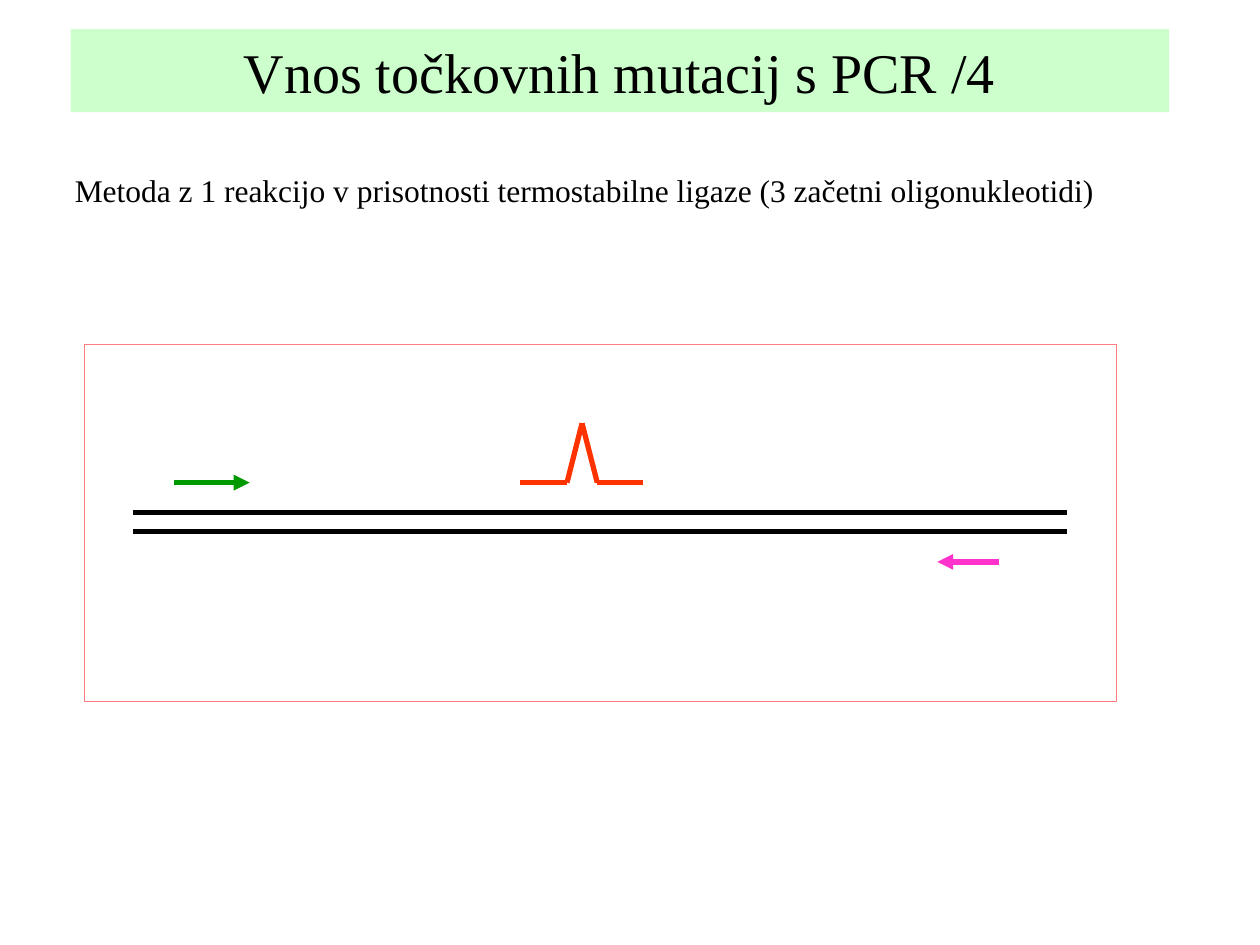
from dataclasses import dataclass
from itertools import pairwise

from lxml.etree import SubElement
from pptx import Presentation
from pptx.dml.color import RGBColor as RGB
from pptx.enum.shapes import MSO_CONNECTOR as Conn, MSO_SHAPE as Shape
from pptx.enum.text import MSO_ANCHOR as Anchor, PP_ALIGN as Align
from pptx.oxml.ns import qn
from pptx.util import Pt

Point = tuple[float, float]


@dataclass(frozen=True)
class Theme:
    font: str = "Times New Roman"
    ink: str = "000000"
    band: str = "CCFFCC"
    frame: str = "FF7C80"
    left: str = "009900"
    right: str = "FF33CC"
    mutant: str = "FF3300"
    title: float = 32
    body: float = 18
    line: float = 3
    thin: float = 0.5


@dataclass(frozen=True)
class Strand:
    """A chain of straight lines through the given points."""
    points: tuple[Point, ...]
    color: str
    arrow: bool = False


THEME = Theme()
PRIMER_Y = 275.8
DNA_X = (76.3, 609.8)

STRANDS = (
    *(Strand(tuple((x, y) for x in DNA_X), THEME.ink) for y in (303.8, 293)),
    Strand(((99.4, PRIMER_Y), (142.6, PRIMER_Y)), THEME.left, True),
    Strand(((571, 321.1), (535.7, 321.1)), THEME.right, True),
    Strand(((297.4, PRIMER_Y), (324, PRIMER_Y), (332.6, 241.9),
            (341.3, PRIMER_Y), (367.2, PRIMER_Y)), THEME.mutant),
)


def add_text(frame, text: str, size: float, align: Align, anchor: Anchor) -> None:
    frame.word_wrap = True
    frame.vertical_anchor = anchor
    para = frame.paragraphs[0]
    para.alignment = align
    run = para.add_run()
    run.text = text
    font = run.font
    font.name, font.size = THEME.font, Pt(size)
    font.color.rgb = RGB.from_string(THEME.ink)


def add_title(shapes, text: str) -> None:
    band = shapes.add_shape(Shape.RECTANGLE, Pt(40.3), Pt(16.6), Pt(627.8), Pt(47.5))
    band.shadow.inherit = False
    band.fill.solid()
    band.fill.fore_color.rgb = RGB.from_string(THEME.band)
    band.line.fill.background()
    add_text(band.text_frame, text, THEME.title, Align.CENTER, Anchor.MIDDLE)


def add_body(shapes, text: str) -> None:
    box = shapes.add_textbox(Pt(31), Pt(94.3), Pt(663.8), Pt(51.1))
    add_text(box.text_frame, text, THEME.body, Align.LEFT, Anchor.TOP)
    box.text_frame.margin_left = Pt(11.7)
    box.text_frame.paragraphs[0].space_before = Pt(2)


def add_strand(shapes, strand: Strand) -> None:
    for start, end in pairwise(strand.points):
        link = shapes.add_connector(Conn.STRAIGHT, *map(Pt, start + end))
        link.line.width = Pt(THEME.line)
        link.line.color.rgb = RGB.from_string(strand.color)
        if strand.arrow:
            SubElement(link.line._get_or_add_ln(), qn("a:tailEnd"), type="triangle")
        SubElement(link._element.spPr, qn("a:effectLst"))


def add_frame(shapes) -> None:
    frame = shapes.add_shape(Shape.RECTANGLE, Pt(48.2), Pt(196.6), Pt(589.7), Pt(204.5))
    frame.shadow.inherit = False
    frame.fill.background()
    frame.line.width = Pt(THEME.thin)
    frame.line.color.rgb = RGB.from_string(THEME.frame)


def main() -> None:
    deck = Presentation()
    deck.slide_width, deck.slide_height = Pt(720), Pt(540)
    shapes = deck.slides.add_slide(deck.slide_layouts[6]).shapes
    add_title(shapes, "Vnos točkovnih mutacij s PCR /4")
    add_body(shapes, "Metoda z 1 reakcijo v prisotnosti termostabilne ligaze "
                     "(3 začetni oligonukleotidi)")
    group = shapes.add_group_shape().shapes
    for strand in STRANDS:
        add_strand(group, strand)
    add_frame(group)
    deck.save("out.pptx")


if __name__ == "__main__":
    main()
